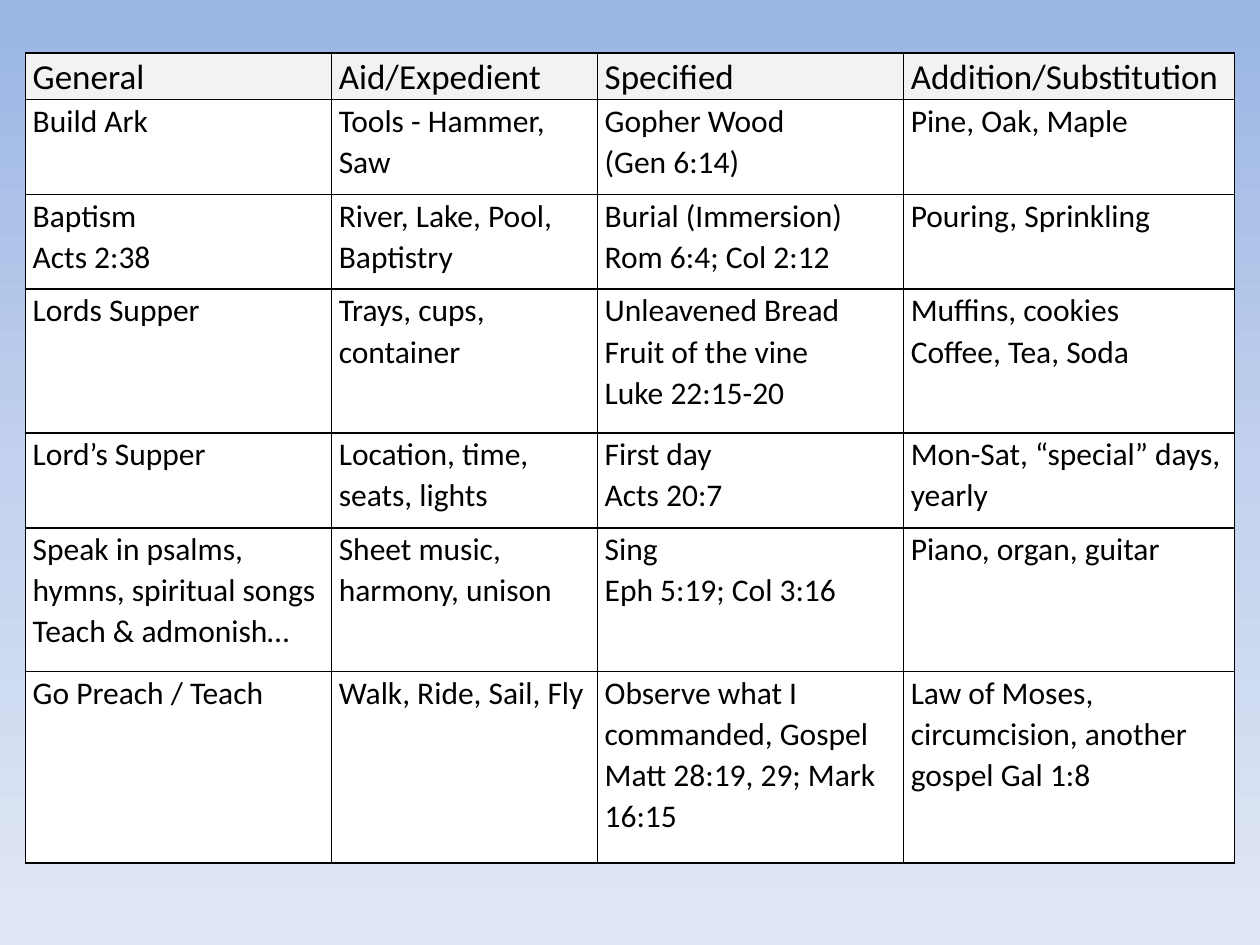
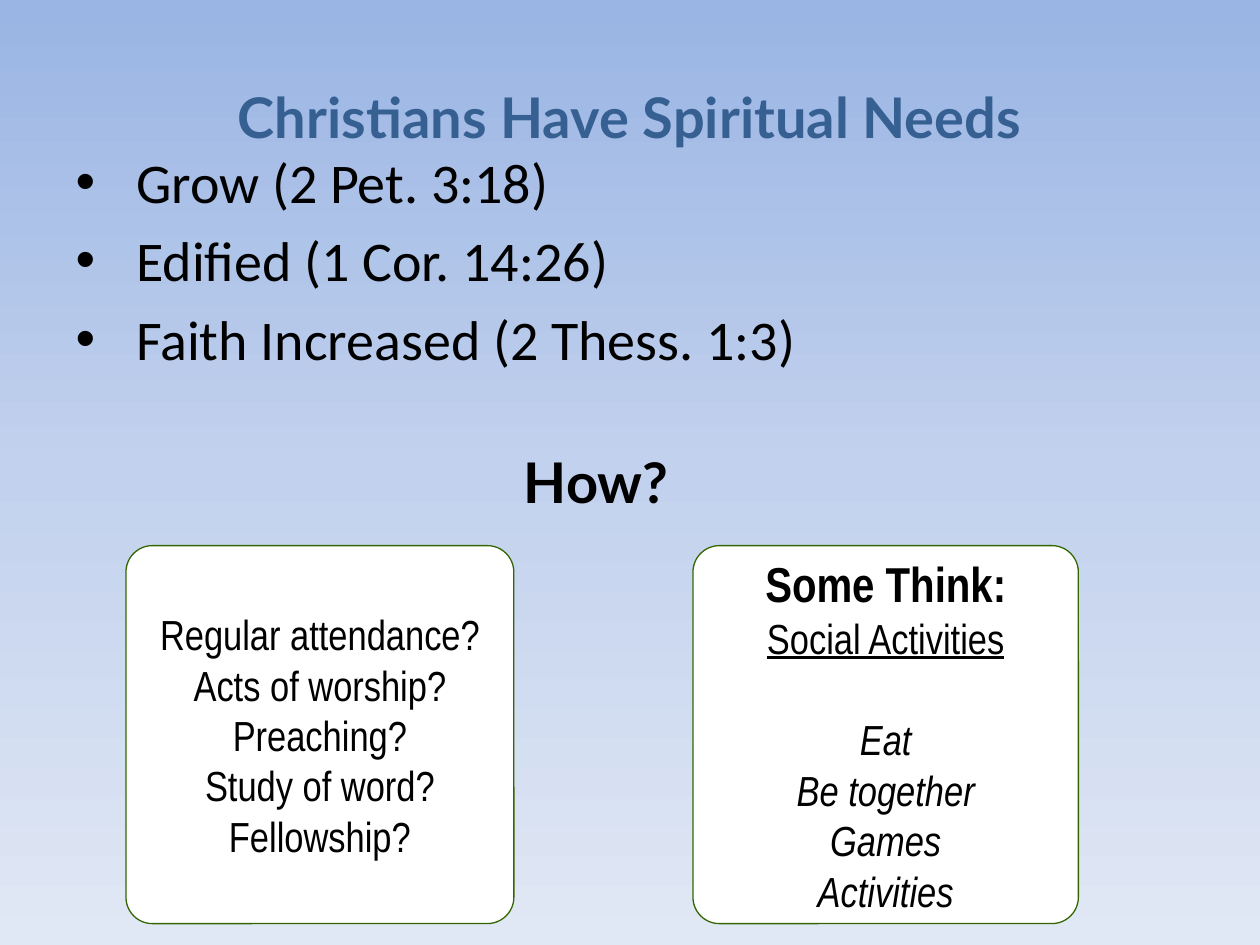
import pptx
import pptx.util
import pptx.dml.color
import pptx.enum.shapes
import pptx.enum.text
import pptx.oxml
import pptx.oxml.ns
from lxml import etree

Cm, Pt = pptx.util.Cm, pptx.util.Pt
RGBColor = pptx.dml.color.RGBColor
ALIGN = pptx.enum.text.PP_ALIGN
MIDDLE = pptx.enum.text.MSO_ANCHOR.MIDDLE
qn = pptx.oxml.ns.qn

# Shared look
BLACK = RGBColor(0x00, 0x00, 0x00)
WHITE = RGBColor(0xFF, 0xFF, 0xFF)
HEADER_GREY = RGBColor(0xF2, 0xF2, 0xF2)
TITLE_BLUE = RGBColor(0x37, 0x60, 0x92)
BOX_GREEN = RGBColor(0x33, 0x66, 0x00)
SKY = [(0, RGBColor(0x9A, 0xB5, 0xE4)),
       (50, RGBColor(0xC2, 0xD1, 0xED)),
       (100, RGBColor(0xE1, 0xE8, 0xF5))]
HEAD_FONT, BODY_FONT, BOX_FONT = "Lato", "Calibri", "Arial Narrow"

# Slide 1: one tuple of cells per row, one line break per paragraph
AUTHORITY = [
    ("General", "Aid/Expedient", "Specified", "Addition/Substitution"),
    ("Build Ark", "Tools - Hammer, Saw", "Gopher Wood\n(Gen 6:14)",
     "Pine, Oak, Maple"),
    ("Baptism\nActs 2:38", "River, Lake, Pool, Baptistry",
     "Burial (Immersion)\nRom 6:4; Col 2:12", "Pouring, Sprinkling"),
    ("Lords Supper", "Trays, cups, container",
     "Unleavened Bread\nFruit of the vine\nLuke 22:15-20",
     "Muffins, cookies\nCoffee, Tea, Soda"),
    ("Lord’s Supper", "Location, time, seats, lights", "First day\nActs 20:7",
     "Mon-Sat, “special” days, yearly"),
    ("Speak in psalms, hymns, spiritual songs\nTeach & admonish…",
     "Sheet music, harmony, unison", "Sing\nEph 5:19; Col 3:16",
     "Piano, organ, guitar"),
    ("Go Preach / Teach", "Walk, Ride, Sail, Fly",
     "Observe what I commanded, Gospel\nMatt 28:19, 29; Mark 16:15",
     "Law of Moses, circumcision, another gospel Gal 1:8"),
]
COL_WIDTHS = [6.17, 5.36, 6.17, 6.68]
ROW_HEIGHTS = [0.94, 1.91, 1.91, 2.9, 1.91, 2.9, 3.86]

# Slide 2
TITLE = "Christians Have Spiritual Needs"
NEEDS = ["Grow (2 Pet. 3:18)", "Edified (1 Cor. 14:26)",
         "Faith Increased (2 Thess. 1:3)"]
QUESTION = "How?"
# Each box: left, width, lines of (text, size, style)
BOXES = [
    (2.54, 7.82, [(text, 24, {}) for text in (
        "Regular attendance?", "Acts of worship?", "Preaching?",
        "Study of word?", "Fellowship?")]),
    (13.97, 7.77, [("Some Think:", 28, {"bold": True}),
                   ("Social Activities", 24, {"underline": True})]
     + [(text, 24, {"italic": True}) for text in (
         "Eat", "Be together", "Games", "Activities")]),
]
GAP_BEFORE = {"Eat": 29}


def place(sp, left, top, width, height):
    sp.left, sp.top, sp.width, sp.height = map(Cm, (left, top, width, height))


def add_run(p, text, size, font, color=BLACK, **style):
    r = p.add_run()
    r.text = text
    r.font.size, r.font.name = Pt(size), font
    r.font.color.rgb = color
    for name, value in style.items():
        setattr(r.font, name, value)


def paragraphs(tf, items):
    """Yield each item with its paragraph, reusing the empty first one."""
    for i, item in enumerate(items):
        yield (tf.add_paragraph() if i else tf.paragraphs[0]), item


def set_background(master):
    fill = master.background.fill
    fill.gradient()
    fill.gradient_angle = 270
    stops = master.element.find(".//" + qn("a:gsLst"))
    for gs in list(stops):
        stops.remove(gs)
    for percent, color in SKY:
        gs = etree.SubElement(stops, qn("a:gs"), pos=str(percent * 1000))
        etree.SubElement(gs, qn("a:srgbClr"), val=str(color))


def add_borders(cell):
    tc_pr = cell._tc.get_or_add_tcPr()
    for i, side in enumerate(("lnL", "lnR", "lnT", "lnB")):
        ln = etree.Element(qn("a:" + side), w=str(Pt(1)))
        fill = etree.SubElement(ln, qn("a:solidFill"))
        etree.SubElement(fill, qn("a:srgbClr"), val=str(BLACK))
        tc_pr.insert(i, ln)


def build_table_slide(prs):
    slide = prs.slides.add_slide(prs.slide_layouts[6])
    table = slide.shapes.add_table(
        len(AUTHORITY), len(COL_WIDTHS), Cm(0.51), Cm(1.07),
        Cm(sum(COL_WIDTHS)), Cm(sum(ROW_HEIGHTS))).table
    table.first_row = table.horz_banding = False
    for col, width in zip(table.columns, COL_WIDTHS):
        col.width = Cm(width)
    for row, height, texts in zip(table.rows, ROW_HEIGHTS, AUTHORITY):
        row.height = Cm(height)
        header = texts is AUTHORITY[0]
        for cell, text in zip(row.cells, texts):
            cell.margin_left = cell.margin_right = Cm(0.15)
            cell.margin_top = cell.margin_bottom = 0
            cell.fill.solid()
            cell.fill.fore_color.rgb = HEADER_GREY if header else WHITE
            add_borders(cell)
            for p, line in paragraphs(cell.text_frame, text.split("\n")):
                p.line_spacing = 1.07
                add_run(p, line, 20 if header else 18, BODY_FONT)


def add_box(slide, left, width, lines):
    sp = slide.shapes.add_shape(
        pptx.enum.shapes.MSO_SHAPE.ROUNDED_RECTANGLE,
        Cm(left), Cm(11), Cm(width), Cm(7.62))
    sp.adjustments[0] = 0.07
    sp.shadow.inherit = False
    sp.fill.solid()
    sp.fill.fore_color.rgb = WHITE
    sp.line.color.rgb = BOX_GREEN
    sp.line.width = Pt(0.75)
    tf = sp.text_frame
    tf.word_wrap = True
    tf.vertical_anchor = MIDDLE
    for p, (text, size, style) in paragraphs(tf, lines):
        p.alignment = ALIGN.CENTER
        if text in GAP_BEFORE:
            p.space_before = Pt(GAP_BEFORE[text])
        add_run(p, text, size, BOX_FONT, **style)


def build_needs_slide(prs):
    slide = prs.slides.add_slide(prs.slide_layouts[1])

    # Title
    title = slide.shapes.title
    place(title, 1.27, 0.76, 22.86, 3.18)
    title.text_frame.vertical_anchor = MIDDLE
    p = title.text_frame.paragraphs[0]
    p.alignment = ALIGN.CENTER
    add_run(p, TITLE, 32, HEAD_FONT, TITLE_BLUE, bold=True)

    # Bulleted needs
    body = slide.placeholders[1]
    place(body, 1.27, 2.84, 22.86, 5.51)
    body.text_frame.auto_size = pptx.enum.text.MSO_AUTO_SIZE.NONE
    for p, need in paragraphs(body.text_frame, NEEDS):
        p_pr = p._p.get_or_add_pPr()
        p_pr.set("marL", str(Cm(1.22)))
        p_pr.set("indent", str(-Cm(1.22)))
        add_run(p, need, 32, BODY_FONT)

    # Question and the two answers
    sp = slide.shapes.add_textbox(Cm(10.31), Cm(8.89), Cm(4.88), Cm(1.63))
    sp.text_frame.word_wrap = True
    add_run(sp.text_frame.paragraphs[0], QUESTION, 32, HEAD_FONT, bold=True)
    for box in BOXES:
        add_box(slide, *box)


def main():
    prs = pptx.Presentation()
    prs.slide_width, prs.slide_height = Cm(25.4), Cm(19.05)
    set_background(prs.slide_master)
    build_table_slide(prs)
    build_needs_slide(prs)
    prs.save("out.pptx")


if __name__ == "__main__":
    main()
